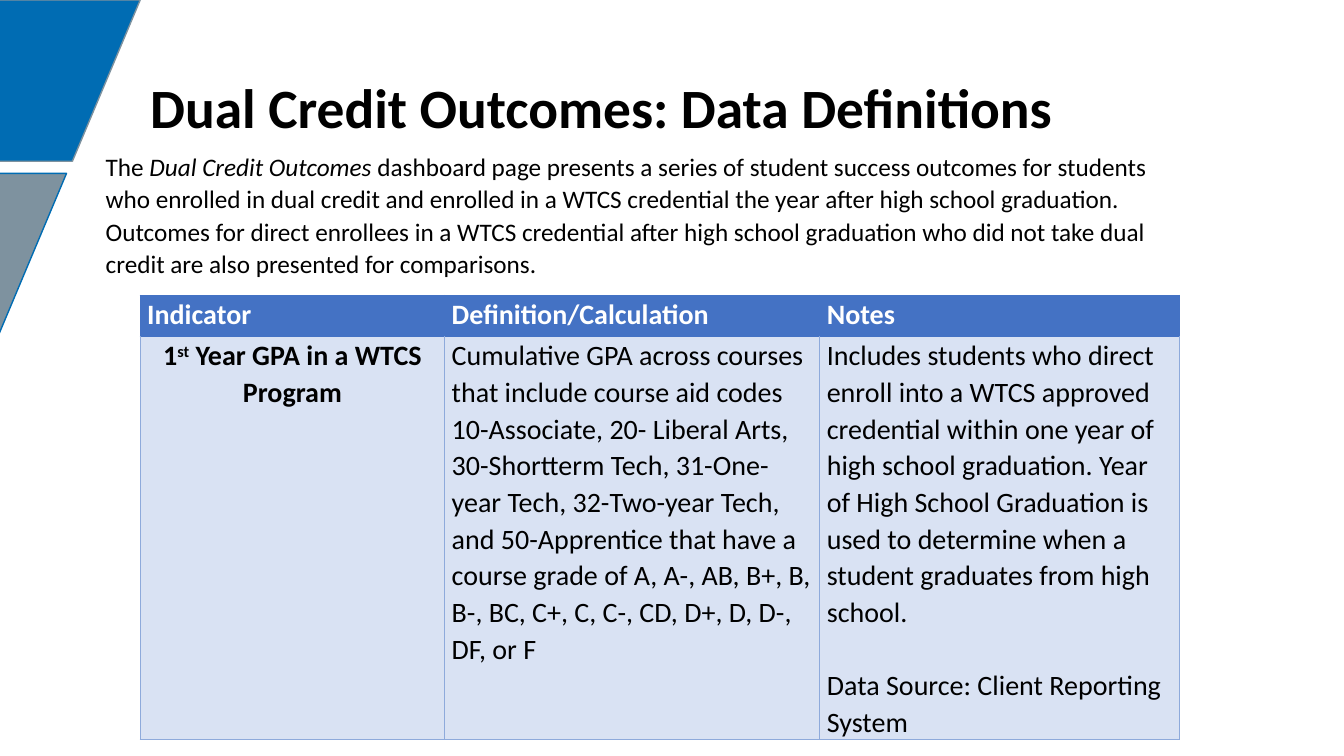
from dataclasses import dataclass

from lxml.etree import SubElement
from pptx import Presentation
from pptx.dml.color import RGBColor
from pptx.enum.shapes import MSO_SHAPE as Preset
from pptx.enum.text import MSO_ANCHOR as Anchor, MSO_AUTO_SIZE as AutoSize, PP_ALIGN as Align
from pptx.oxml.ns import qn
from pptx.slide import Slide
from pptx.table import _Cell as Cell
from pptx.text.text import _Paragraph as Paragraph
from pptx.util import Inches, Pt

SLIDE_WIDTH, SLIDE_HEIGHT = Inches(13.33), Inches(7.5)


@dataclass(frozen=True)
class Theme:
    font: str = "Calibri"
    black: str = "000000"
    white: str = "FFFFFF"
    blue: str = "006CB3"
    gray: str = "7E929F"
    header: str = "4472C4"
    row: str = "D9E2F3"
    grid: str = "8EAADB"
    title_size: float = 39.6
    intro_size: float = 18
    table_size: float = 20
    line_spacing: float = 1.07


THEME = Theme()


def across(percent: float) -> int:
    return round(SLIDE_WIDTH * percent / 100)


def down(percent: float) -> int:
    return round(SLIDE_HEIGHT * percent / 100)


@dataclass(frozen=True)
class Area:
    """A rectangle in percent of the slide's width and height."""
    left: float
    top: float
    width: float
    height: float

    def box(self) -> tuple[int, int, int, int]:
        return across(self.left), down(self.top), across(self.width), down(self.height)


@dataclass(frozen=True)
class Stripe:
    area: Area
    fill: str
    line: str


@dataclass(frozen=True)
class Span:
    text: str
    italic: bool = False
    raised: bool = False


@dataclass(frozen=True)
class Entry:
    paragraphs: list[list[Span]]
    bold: bool = False
    align: Align = Align.LEFT


@dataclass(frozen=True)
class Row:
    height: float
    fill: str
    color: str
    top: str
    border: str
    entries: list[Entry]


STRIPES = [
    Stripe(Area(-14.78, 0, 25.21, 21.33), THEME.blue, THEME.gray),
    Stripe(Area(-20.26, 22.93, 25.21, 21.33), THEME.gray, THEME.blue),
]
TITLE_AREA = Area(10.43, 8.13, 69.17, 13.07)
INTRO_AREA = Area(7.13, 19.07, 82.45, 18.4)
TABLE_AREA = Area(10.43, 39.07, 77.35, 54.8)
COLUMN_WIDTHS = [22.66, 27.91, 26.78]

INTRO = [
    Span("The "),
    Span("Dual Credit Outcomes ", italic=True),
    Span("dashboard page presents a series of student success outcomes for students who enrolled in "
         "dual credit and enrolled in a WTCS credential the year after high school graduation. "
         "Outcomes for direct enrollees in a WTCS credential after high school graduation who did "
         "not take dual credit are also presented for comparisons."),
]
DEFINITION = ("Cumulative GPA across courses that include course aid codes 10-Associate, "
              "20- Liberal Arts, 30-Shortterm Tech, 31-One-year Tech, 32-Two-year Tech, and "
              "50-Apprentice that have a course grade of A, A-, AB, B+, B, B-, BC, C+, C, C-, CD, "
              "D+, D, D-, DF, or F")
NOTE = ("Includes students who direct enroll into a WTCS approved credential within one year of "
        "high school graduation. Year of High School Graduation is used to determine when a "
        "student graduates from high school.")
ROWS = [
    Row(5.47, THEME.header, THEME.white, THEME.header, THEME.header,
        [Entry([[Span(name)]], bold=True)
         for name in ("Indicator", "Definition/Calculation", "Notes")]),
    Row(49.33, THEME.row, THEME.black, THEME.header, THEME.grid, [
        Entry([[Span("1"), Span("st", raised=True), Span(" Year GPA in a WTCS Program")]],
              bold=True, align=Align.CENTER),
        Entry([[Span(DEFINITION)]]),
        Entry([[Span(NOTE)], [Span("Data Source: Client Reporting System")]]),
    ]),
]


def write(paragraph: Paragraph, spans: list[Span], size: float, color: str,
          bold: bool = False, spacing: float = THEME.line_spacing) -> None:
    paragraph.line_spacing = spacing
    font = paragraph.font
    font.name, font.size, font.bold = THEME.font, Pt(size), bold
    font.color.rgb = RGBColor.from_string(color)
    for span in spans:
        run = paragraph.add_run()
        run.text = span.text
        if span.italic:
            run.font.italic = True
        if span.raised:
            run._r.get_or_add_rPr().set("baseline", "30000")


def draw_stripe(slide: Slide, stripe: Stripe) -> None:
    shape = slide.shapes.add_shape(Preset.FLOWCHART_DATA, *stripe.area.box())
    shape.shadow.inherit = False
    shape.fill.solid()
    shape.fill.fore_color.rgb = RGBColor.from_string(stripe.fill)
    shape.line.color.rgb = RGBColor.from_string(stripe.line)
    shape.line.width = Pt(1)


def draw_title(slide: Slide, text: str) -> None:
    title = slide.shapes.title
    title.left, title.top, title.width, title.height = TITLE_AREA.box()
    frame = title.text_frame
    frame.auto_size, frame.vertical_anchor = AutoSize.NONE, Anchor.MIDDLE
    paragraph = frame.paragraphs[0]
    paragraph.alignment = Align.LEFT
    write(paragraph, [Span(text)], THEME.title_size, THEME.black, bold=True, spacing=0.9)


def draw_intro(slide: Slide) -> None:
    frame = slide.shapes.add_textbox(*INTRO_AREA.box()).text_frame
    frame.word_wrap, frame.auto_size = True, AutoSize.SHAPE_TO_FIT_TEXT
    paragraph = frame.paragraphs[0]
    paragraph.space_after = Pt(6)
    write(paragraph, INTRO, THEME.intro_size, THEME.black)


def set_borders(cell: Cell, row: Row) -> None:
    properties = cell._tc.get_or_add_tcPr()
    for side, color in zip("LRTB", (row.border, row.border, row.top, row.border)):
        line = SubElement(properties, qn(f"a:ln{side}"), w=str(Pt(1)))
        SubElement(SubElement(line, qn("a:solidFill")), qn("a:srgbClr"), val=color)


def fill_cell(cell: Cell, row: Row, entry: Entry) -> None:
    set_borders(cell, row)
    cell.fill.solid()
    cell.fill.fore_color.rgb = RGBColor.from_string(row.fill)
    cell.margin_left = cell.margin_right = Inches(0.07)
    cell.margin_top = cell.margin_bottom = 0
    frame = cell.text_frame
    for index, spans in enumerate(entry.paragraphs):
        paragraph = frame.add_paragraph() if index else frame.paragraphs[0]
        paragraph.alignment = entry.align
        if index:  # one line of space between paragraphs
            paragraph.space_before = Pt(26)
        write(paragraph, spans, THEME.table_size, row.color, entry.bold)


def draw_table(slide: Slide) -> None:
    table = slide.shapes.add_table(len(ROWS), len(COLUMN_WIDTHS), *TABLE_AREA.box()).table
    for column, width in zip(table.columns, COLUMN_WIDTHS):
        column.width = across(width)
    for table_row, row in zip(table.rows, ROWS):
        table_row.height = down(row.height)
        for cell, entry in zip(table_row.cells, row.entries):
            fill_cell(cell, row, entry)


def main() -> None:
    presentation = Presentation()
    presentation.slide_width, presentation.slide_height = SLIDE_WIDTH, SLIDE_HEIGHT
    slide = presentation.slides.add_slide(presentation.slide_layouts[5])
    # Corner stripes
    for stripe in STRIPES:
        draw_stripe(slide, stripe)
    # Heading, table and introduction
    draw_title(slide, "Dual Credit Outcomes: Data Definitions")
    draw_table(slide)
    draw_intro(slide)
    presentation.save("out.pptx")


if __name__ == "__main__":
    main()
